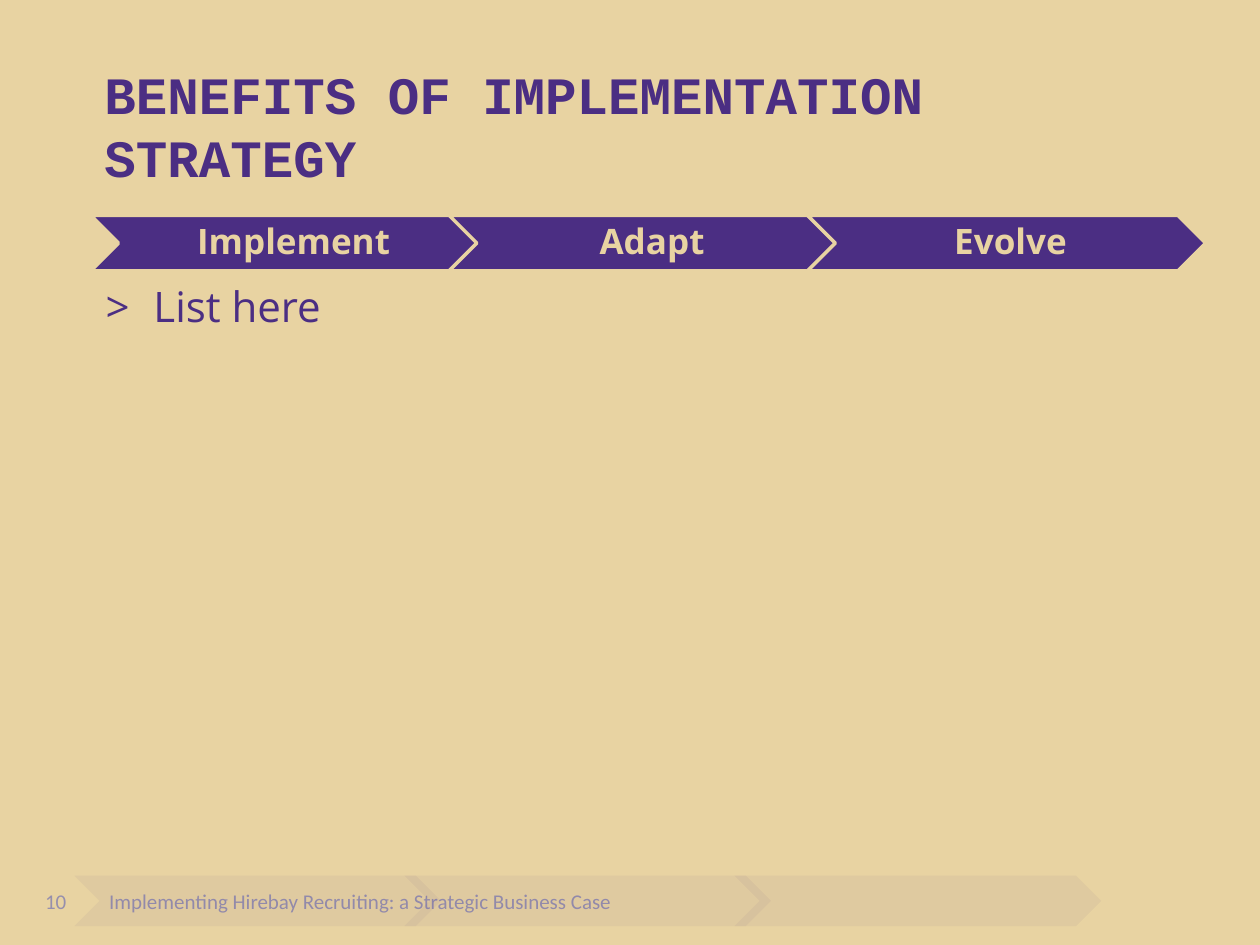
from lxml import etree
from pptx import Presentation
from pptx.dml.color import RGBColor
from pptx.enum.shapes import MSO_SHAPE as SHAPE
from pptx.enum.text import MSO_ANCHOR as ANCHOR, PP_ALIGN as ALIGN
from pptx.oxml.ns import qn
from pptx.util import Inches, Pt

PURPLE = RGBColor(0x4B, 0x2E, 0x83)
GOLD = RGBColor(0xE8, 0xD3, 0xA2)
MUTED = RGBColor(0x96, 0x8F, 0xAD)

prs = Presentation()
prs.slide_width, prs.slide_height = Inches(10), Inches(7.5)
s = prs.slides.add_slide(prs.slide_layouts[6])
s.background.fill.solid()
s.background.fill.fore_color.rgb = GOLD


def add_text(text, left, top, width, height, font, size, color,
             anchor=ANCHOR.MIDDLE, align=ALIGN.LEFT, bold=False):
    """Add a one-paragraph text box and return its text frame."""
    box = s.shapes.add_textbox(Inches(left), Inches(top), Inches(width), Inches(height))
    tf = box.text_frame
    tf.word_wrap = True
    tf.vertical_anchor = anchor
    p = tf.paragraphs[0]
    p.text = text
    p.alignment = align
    p.font.name, p.font.size, p.font.bold = font, Pt(size), bold
    p.font.color.rgb = color
    return tf


def add_chevron(left, top, width, height):
    sp = s.shapes.add_shape(SHAPE.CHEVRON, Inches(left), Inches(top),
                            Inches(width), Inches(height))
    sp.shadow.inherit = False
    sp.fill.solid()
    sp.fill.fore_color.rgb = PURPLE
    return sp


# Title
tf = add_text("BENEFITS OF IMPLEMENTATION STRATEGY", 0.73, 0.41, 8.82, 1.08,
              "Courier New", 30, PURPLE, anchor=ANCHOR.BOTTOM, bold=True)
tf.margin_bottom = 0
tf.paragraphs[0].line_spacing = Pt(36)

# Bulleted list
tf = add_text("List here", 0.74, 2.18, 8.83, 4.39, "Open Sans", 24, PURPLE,
              anchor=ANCHOR.TOP)
pPr = tf.paragraphs[0]._p.get_or_add_pPr()
pPr.set("marL", str(Inches(0.38)))
pPr.set("indent", str(-Inches(0.38)))
bullet_font = etree.Element(qn("a:buFont"), typeface="Open Sans")
bullet = etree.Element(qn("a:buChar"), char=">")
pPr.insert(0, bullet_font)
bullet_font.addnext(bullet)

# Footer and slide number
add_text("Implementing Hirebay Recruiting: a Strategic Business Case",
         0.69, 6.95, 4.34, 0.4, "Calibri", 12, MUTED, align=ALIGN.CENTER)
add_text("10", 0.26, 6.95, 0.43, 0.4, "Calibri", 12, MUTED)

# Process steps
for i, step in enumerate(["Implement", "Adapt", "Evolve"]):
    left = 0.72 + i * 2.845
    sp = add_chevron(left, 1.71, 3.16, 0.44)
    sp.line.color.rgb = GOLD
    sp.line.width = Pt(2)
    tf = add_text(step, left + 0.22, 1.71, 2.72, 0.44, "Open Sans", 20, GOLD,
                  align=ALIGN.CENTER, bold=True)
    tf.margin_left = Inches(0.09)
    tf.margin_top = tf.margin_right = tf.margin_bottom = Inches(0.03)
    tf.paragraphs[0].line_spacing = 0.9

# Faint footer chevrons
for i in range(3):
    sp = add_chevron(0.59 + i * 2.62, 6.95, 2.91, 0.4)
    sp.line.fill.background()
    color = sp.fill._xPr.find(qn("a:solidFill"))[0]
    etree.SubElement(color, qn("a:alpha"), val="5000")

prs.save("out.pptx")
